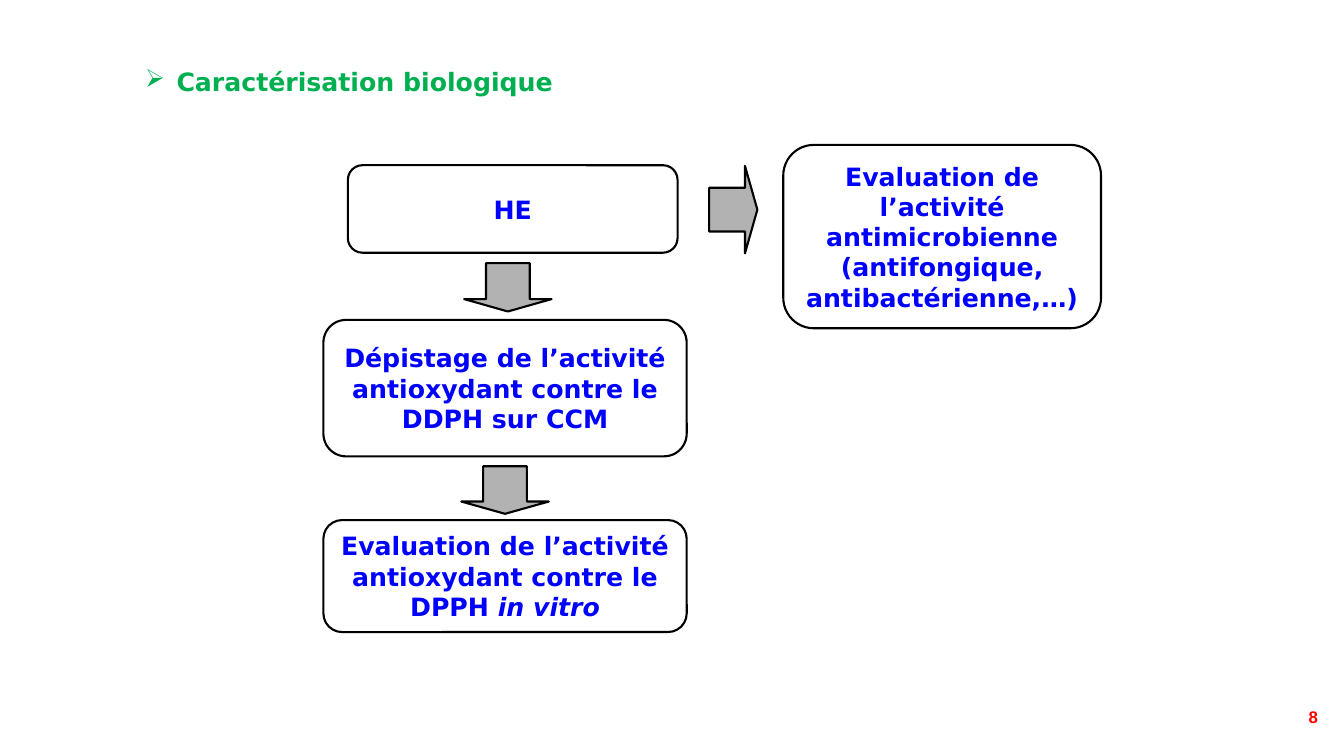
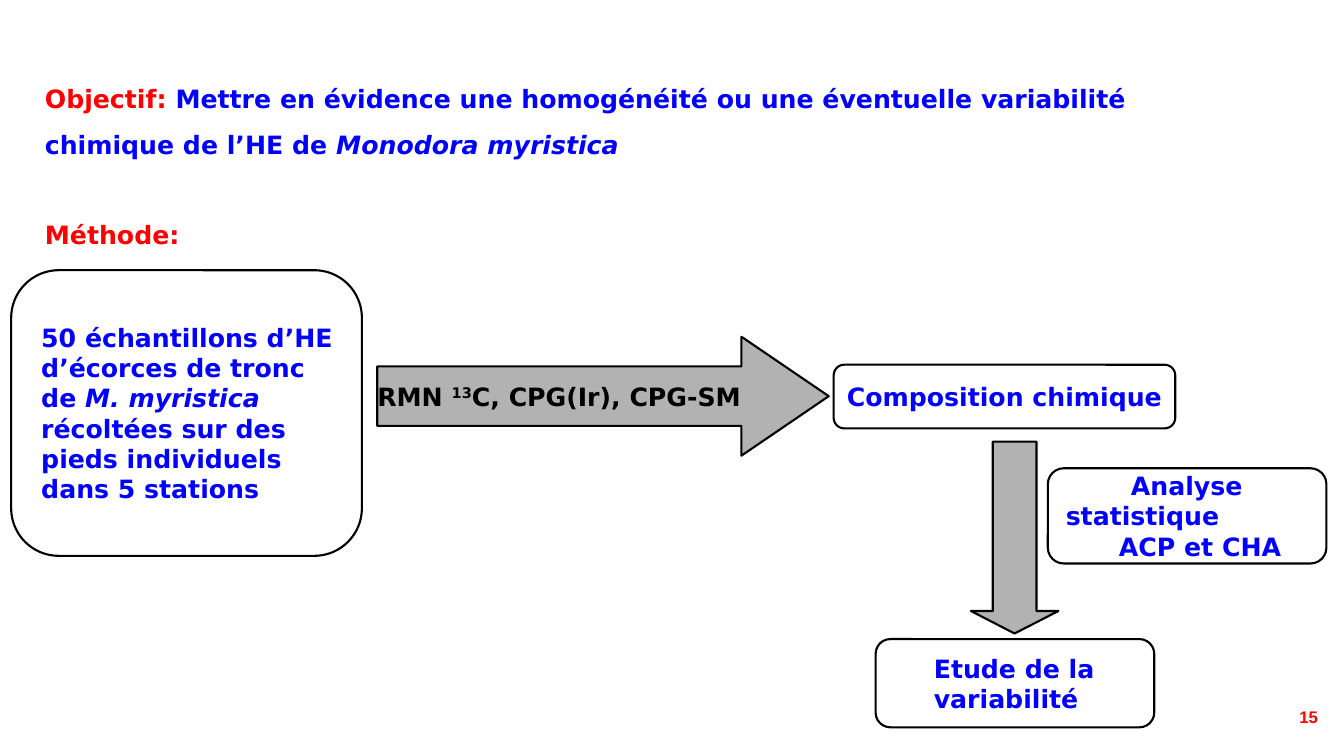
from pptx import Presentation
from pptx.dml.color import RGBColor
from pptx.enum.shapes import MSO_SHAPE as Preset
from pptx.enum.text import MSO_ANCHOR as Anchor, PP_ALIGN as Align
from pptx.oxml.ns import qn
from pptx.util import Pt
from lxml.etree import SubElement

WHITE = RGBColor(0xFF, 0xFF, 0xFF)
BLACK = RGBColor(0x00, 0x00, 0x00)
GREY = RGBColor(0xB2, 0xB2, 0xB2)
BLUE = RGBColor(0x00, 0x00, 0xFF)
RED = RGBColor(0xFF, 0x00, 0x00)
GREEN = RGBColor(0x00, 0xB0, 0x50)


class Deck:
    text_font = "DejaVu Sans"
    number_font = "Arial"
    text_size = 18
    number_size = 12
    line_width = 1.5
    box_inset = 5

    def __init__(self):
        self.presentation = Presentation()
        self.presentation.slide_width = Pt(960)
        self.presentation.slide_height = Pt(540)
        self.slide = None

    def new_slide(self, number):
        layout = self.presentation.slide_layouts[6]
        self.slide = self.presentation.slides.add_slide(layout)
        frame = self.text_box(780.5, 493, 168, 37.5)
        frame.vertical_anchor = Anchor.MIDDLE
        paragraph = self.compose(frame.paragraphs[0], [str(number)], RED, Align.RIGHT)
        paragraph.font.name = self.number_font
        paragraph.font.size = Pt(self.number_size)

    def text_box(self, left, top, width, height):
        box = self.slide.shapes.add_textbox(Pt(left), Pt(top), Pt(width), Pt(height))
        box.text_frame.word_wrap = True
        return box.text_frame

    def compose(self, paragraph, runs, color=BLUE, align=Align.LEFT):
        paragraph.alignment = align
        font = paragraph.font
        font.name, font.size, font.bold = self.text_font, Pt(self.text_size), True
        font.color.rgb = color
        for item in runs:
            text, style = (item, None) if isinstance(item, str) else item
            run = paragraph.add_run()
            run.text = text
            if style == "italic":
                run.font.italic = True
            elif style == "superscript":
                run._r.get_or_add_rPr().set("baseline", "30000")
            elif style is not None:
                run.font.color.rgb = style
        return paragraph

    def indent(self, paragraph, margin, first_line, bullet=None):
        properties = paragraph._p.get_or_add_pPr()
        properties.set("marL", str(Pt(margin)))
        properties.set("indent", str(Pt(first_line)))
        if bullet:
            SubElement(properties, qn("a:buChar")).set("char", bullet)

    def heading(self, text):
        paragraph = self.text_box(96.5, 44, 577, 29).paragraphs[0]
        self.indent(paragraph, 22.5, -22.5, "➢")
        self.compose(paragraph, [text], GREEN)

    def outline(self, preset, left, top, width, height, fill):
        shape = self.slide.shapes.add_shape(
            preset, Pt(left), Pt(top), Pt(width), Pt(height))
        shape.shadow.inherit = False
        shape.fill.solid()
        shape.fill.fore_color.rgb = fill
        shape.line.color.rgb = BLACK
        shape.line.width = Pt(self.line_width)
        return shape

    def box(self, left, top, width, height, runs, align=Align.CENTER, inset=box_inset):
        shape = self.outline(Preset.ROUNDED_RECTANGLE, left, top, width, height, WHITE)
        frame = shape.text_frame
        frame.word_wrap = True
        frame.vertical_anchor = Anchor.MIDDLE
        frame.margin_left = Pt(inset)
        frame.margin_right = Pt(self.box_inset)
        self.compose(frame.paragraphs[0], runs, align=align)
        return frame

    def arrow(self, preset, left, top, width, height, head=0.257):
        shape = self.outline(preset, left, top, width, height, GREY)
        shape.adjustments[0] = 0.5
        shape.adjustments[1] = head
        return shape.text_frame


def biological_slide(deck):
    deck.new_slide(8)
    deck.heading("Caractérisation biologique")
    deck.arrow(Preset.DOWN_ARROW, 331.5, 188, 62.5, 34.5)
    deck.box(248.5, 118, 235.5, 62.5, ["HE"])
    deck.box(231, 228.5, 259.5, 97.5,
             ["Dépistage de l’activité antioxydant contre le DDPH sur CCM"])
    deck.arrow(Preset.DOWN_ARROW, 329.5, 333, 62.5, 34)
    deck.box(231, 371.5, 259.5, 80,
             ["Evaluation de l’activité antioxydant contre le DPPH ", ("in vitro", "italic")])
    deck.arrow(Preset.RIGHT_ARROW, 506.5, 118.5, 34.5, 62.5)
    deck.box(559.5, 103.5, 227, 131,
             ["Evaluation de l’activité antimicrobienne (antifongique, antibactérienne,…)"])


def variability_slide(deck):
    deck.new_slide(15)
    frame = deck.text_box(25, 45.5, 839, 138)
    objective = deck.compose(frame.paragraphs[0], [
        ("Objectif: ", RED),
        "Mettre en évidence une homogénéité ou une éventuelle variabilité "
        "chimique de l’HE de ",
        ("Monodora myristica", "italic")])
    method = deck.compose(frame.add_paragraph(), ["Méthode:"], RED)
    method.space_before = Pt(32)
    for paragraph in (objective, method):
        paragraph.line_spacing = 1.5

    techniques = deck.arrow(Preset.RIGHT_ARROW, 269.5, 240.5, 322.5, 85, 0.734)
    techniques.vertical_anchor = Anchor.MIDDLE
    techniques.margin_left = techniques.margin_right = 0
    techniques.word_wrap = True
    deck.compose(techniques.paragraphs[0],
                 ["RMN ", ("13", "superscript"), "C, CPG(Ir), CPG-SM"], BLACK)

    deck.box(8, 193, 250.5, 204,
             ["50 échantillons d’HE d’écorces de tronc de ", ("M. myristica ", "italic"),
              "récoltées sur des pieds individuels dans 5 stations"], Align.LEFT, 11.5)
    deck.box(595.5, 260.5, 244, 45.5, ["Composition chimique"])
    deck.arrow(Preset.DOWN_ARROW, 693.5, 315.5, 62.5, 137)
    analysis = deck.box(748.5, 334.5, 199, 68, ["Analyse statistique"], Align.LEFT, 9.5)
    deck.indent(analysis.paragraphs[0], 0, 46.5)
    statistics = analysis.add_paragraph()
    deck.indent(statistics, 38, 0)
    deck.compose(statistics, ["ACP et CHA"])
    deck.box(625.5, 456.5, 199, 63, ["Etude de la variabilité"], Align.LEFT, 38.5)


def main():
    deck = Deck()
    biological_slide(deck)
    variability_slide(deck)
    deck.presentation.save("out.pptx")


if __name__ == "__main__":
    main()
